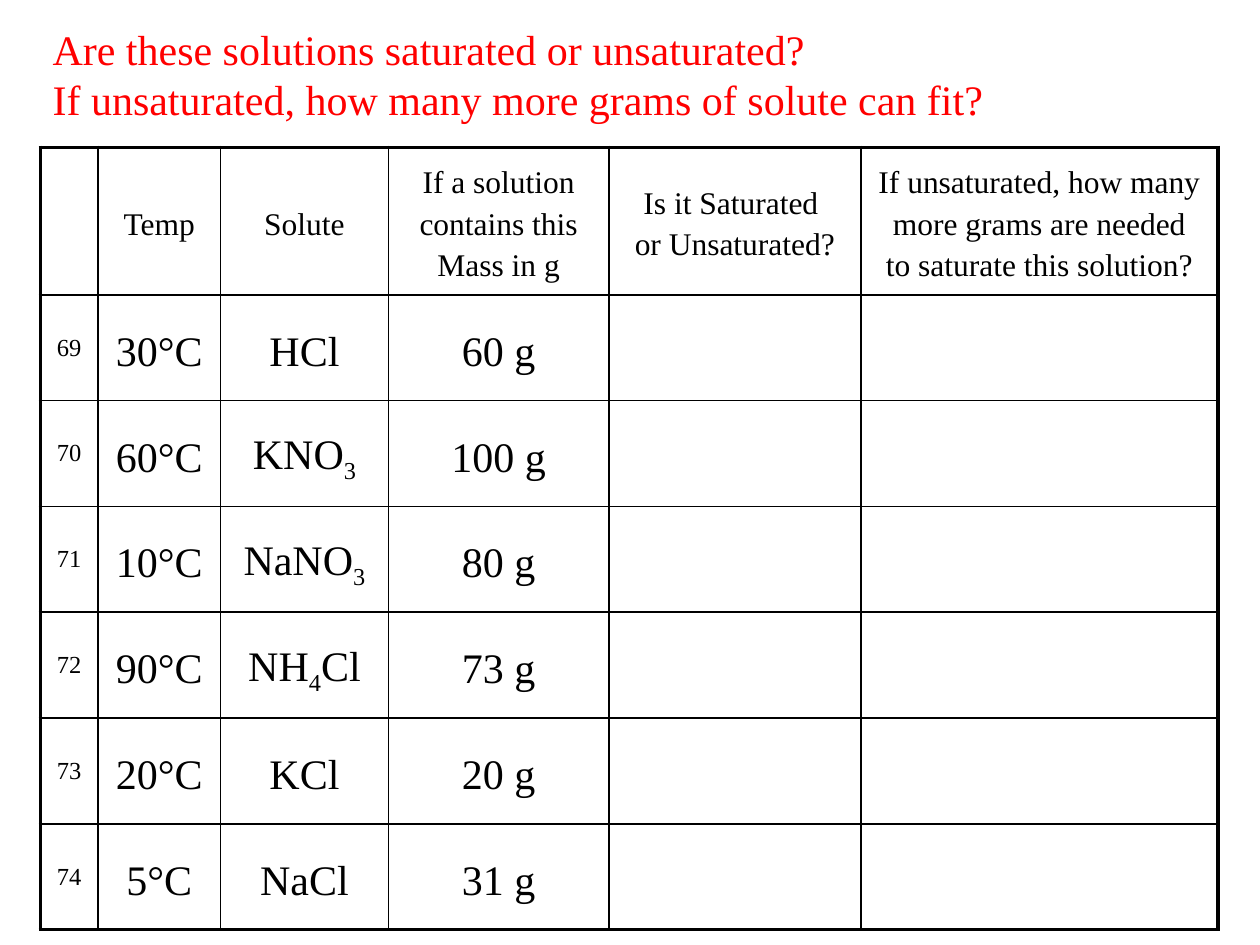
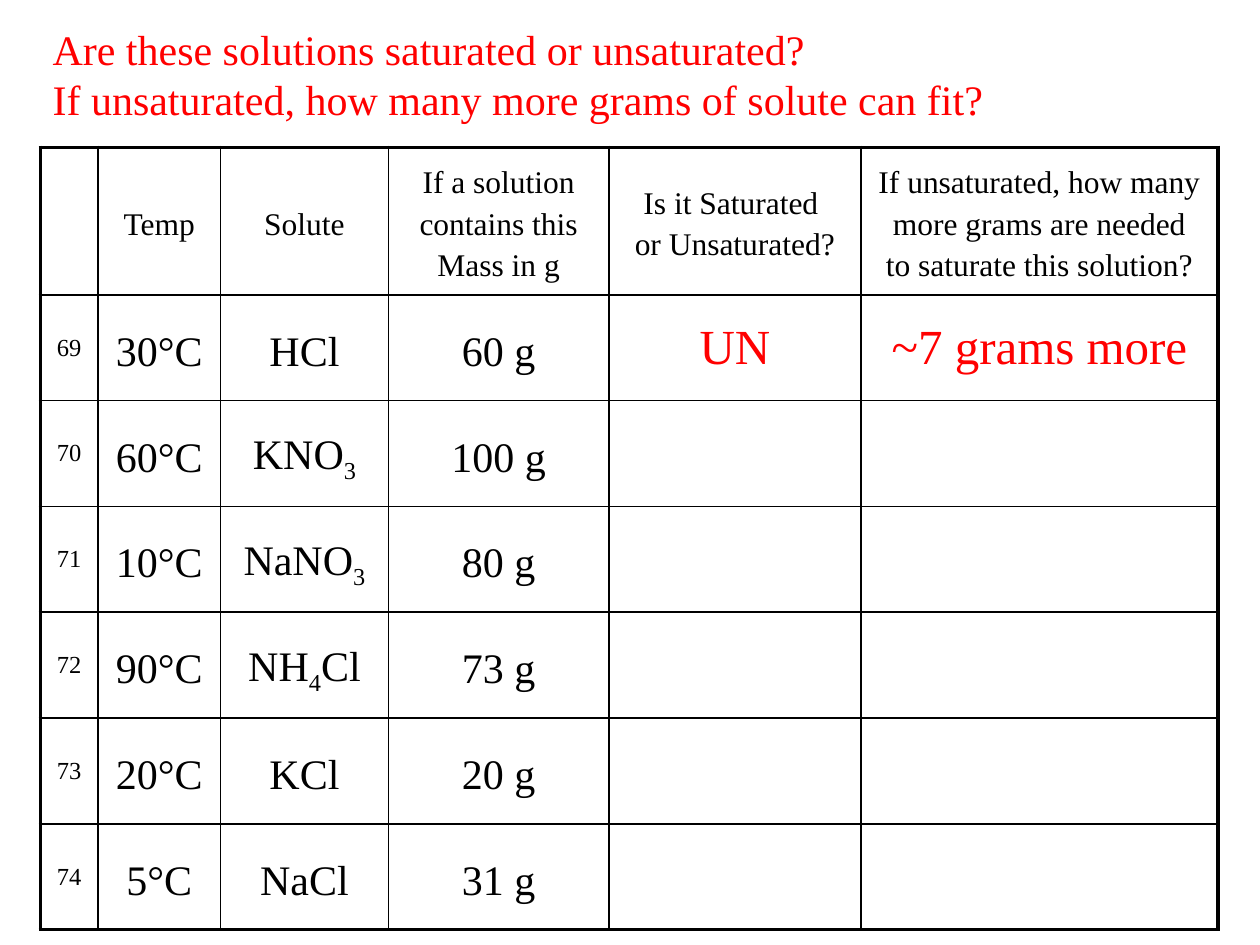
from dataclasses import dataclass, field
from itertools import groupby

from lxml.etree import SubElement
from pptx import Presentation
from pptx.dml.color import RGBColor
from pptx.enum.text import MSO_ANCHOR as ANCHOR, PP_ALIGN as ALIGN
from pptx.oxml.ns import qn
from pptx.util import Pt

FONT = "Times New Roman"
BLACK, RED = "000000", "FF0000"
THIN, THICK = 1, 2.25
LEFT, TITLE_TOP, TABLE_TOP = 23, 9.4, 84.2
COL_WIDTHS = [33, 70, 96, 126, 144, 204]
ROW_HEIGHT = 60.48

TITLE = ("Are these solutions saturated or unsaturated?\n"
         "If unsaturated, how many more grams of solute can fit?")
HEADERS = ["", "Temp", "Solute", "If a solution contains this Mass in g",
           "Is it Saturated \nor Unsaturated?",
           "If unsaturated, how many more grams are needed\n"
           "to saturate this solution?"]


@dataclass(frozen=True)
class Solution:
    number: int
    temp: str
    solute: str
    mass: str


@dataclass(frozen=True)
class Worksheet:
    header_height: float
    answers: dict[int, tuple[str, str]] = field(default_factory=dict)
    title_on_top: bool = False


SOLUTIONS = [
    Solution(69, "30°C", "HCl", "60 g"),
    Solution(70, "60°C", "KNO3", "100 g"),
    Solution(71, "10°C", "NaNO3", "80 g"),
    Solution(72, "90°C", "NH4Cl", "73 g"),
    Solution(73, "20°C", "KCl", "20 g"),
    Solution(74, "5°C", "NaCl", "31 g"),
]
WORKSHEETS = [
    Worksheet(84),
    Worksheet(78.3, {69: ("UN", "~7 grams more")}, title_on_top=True),
]


def rgb(color: str) -> RGBColor:
    return RGBColor.from_string(color)


def write(tf, text: str, *, size: float, color: str = BLACK, align=ALIGN.CENTER,
          spacing=None, before: float = 0, after: float = 0,
          formula: bool = False) -> None:
    """Fill the first paragraph; in a formula, digits become subscripts."""
    p = tf.paragraphs[0]
    p.alignment = align
    p.line_spacing = spacing
    p.space_before, p.space_after = Pt(before), Pt(after)
    for i, line in enumerate(text.split("\n")):
        if i:
            p.add_line_break()
        for is_digit, chars in groupby(line, lambda ch: formula and ch.isdigit()):
            r = p.add_run()
            r.text = "".join(chars)
            r.font.name, r.font.size = FONT, Pt(size)
            r.font.color.rgb = rgb(color)
            if is_digit:
                r.font._element.set("baseline", "-25000")


def add_title(slide) -> None:
    box = slide.shapes.add_textbox(Pt(LEFT), Pt(TITLE_TOP), Pt(684), Pt(94.3))
    box.text_frame.word_wrap = True
    write(box.text_frame, TITLE, size=24, color=RED, align=ALIGN.LEFT,
          spacing=Pt(29))


def set_borders(cell, widths: dict[str, float]) -> None:
    tc_pr = cell._tc.get_or_add_tcPr()
    for side, width in widths.items():
        ln = SubElement(tc_pr, qn(f"a:ln{side}"), w=str(Pt(width)))
        fill = SubElement(ln, qn("a:solidFill"))
        SubElement(fill, qn("a:srgbClr"), val=BLACK)


def add_solution_table(slide, sheet: Worksheet) -> None:
    heights = [sheet.header_height] + [ROW_HEIGHT] * len(SOLUTIONS)
    table = slide.shapes.add_table(
        len(heights), len(COL_WIDTHS), Pt(LEFT), Pt(TABLE_TOP),
        Pt(sum(COL_WIDTHS)), Pt(sum(heights))).table
    table.first_row = table.horz_banding = False
    for col, width in zip(table.columns, COL_WIDTHS):
        col.width = Pt(width)
    for row, height in zip(table.rows, heights):
        row.height = Pt(height)

    rows = [HEADERS] + [
        [str(s.number), s.temp, s.solute, s.mass,
         *sheet.answers.get(s.number, ("", ""))] for s in SOLUTIONS]
    last_row, last_col = len(rows) - 1, len(COL_WIDTHS) - 1
    body = dict(spacing=1.19, before=4.8, after=6)
    for i, row in enumerate(rows):
        for j, text in enumerate(row):
            cell = table.cell(i, j)
            cell.vertical_anchor = ANCHOR.MIDDLE
            # Thick outer frame, thin inner grid
            set_borders(cell, {
                "L": THICK if j == 0 else THIN,
                "R": THICK if j == last_col else THIN,
                "T": THICK if i == 0 else THIN,
                "B": THICK if i == last_row else THIN})
            cell.fill.background()
            if not text:
                continue
            if i == 0:
                style = dict(size=18, **body)
            elif j == 0:
                style = dict(size=14, before=2.8)
            elif j > 3:
                style = dict(size=28, color=RED, before=5.6)
            else:
                style = dict(size=24, formula=j == 2, **body)
            write(cell.text_frame, text, **style)


def main() -> None:
    prs = Presentation()
    prs.slide_width, prs.slide_height = Pt(720), Pt(540)
    for sheet in WORKSHEETS:
        slide = prs.slides.add_slide(prs.slide_layouts[6])
        if not sheet.title_on_top:
            add_title(slide)
        add_solution_table(slide, sheet)
        if sheet.title_on_top:
            add_title(slide)
    prs.save("out.pptx")


if __name__ == "__main__":
    main()
